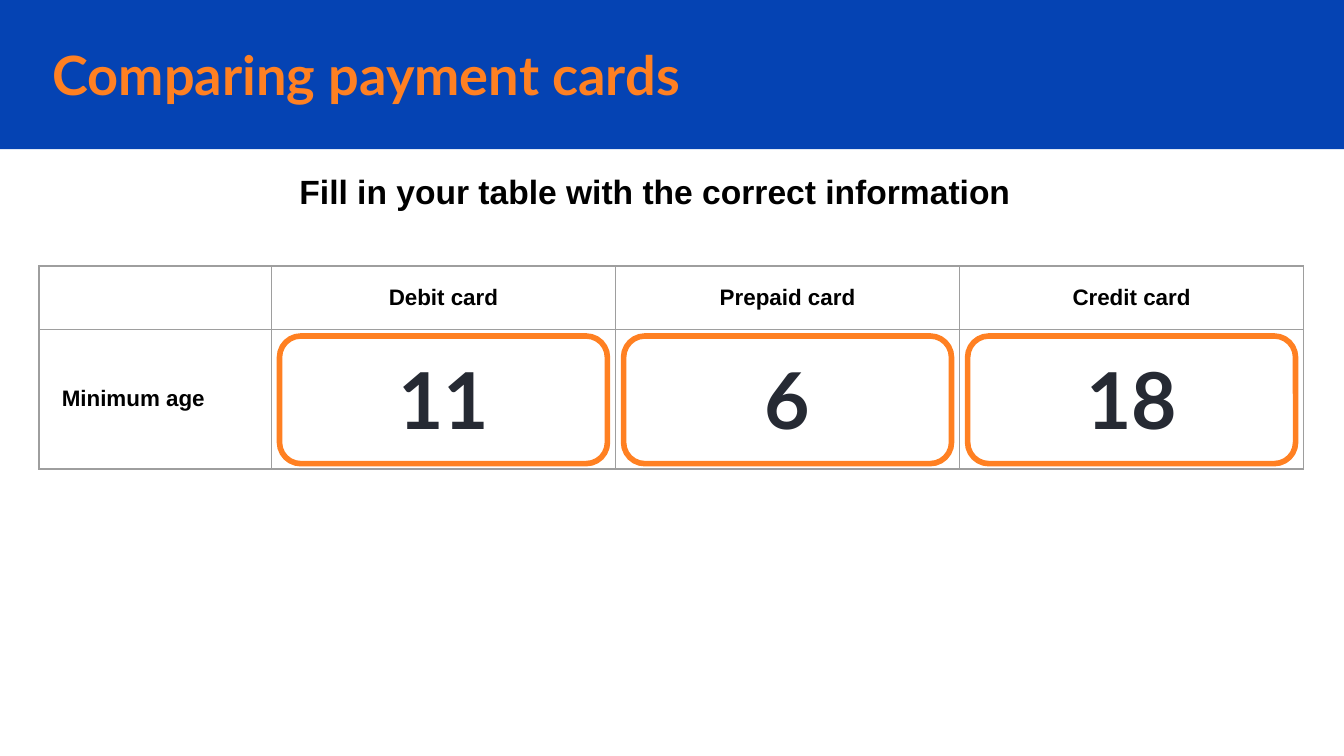
from lxml import etree
from pptx import Presentation
from pptx.dml.color import RGBColor
from pptx.enum.shapes import MSO_SHAPE
from pptx.enum.text import MSO_ANCHOR, PP_ALIGN
from pptx.oxml.ns import qn
from pptx.util import Inches, Pt

BLUE = RGBColor(0x05, 0x43, 0xB3)
ORANGE = RGBColor(0xFF, 0x80, 0x22)
INK = RGBColor(0x26, 0x2A, 0x33)
BLACK = RGBColor(0, 0, 0)
GREY = RGBColor(0x9E, 0x9E, 0x9E)

RECT, ROUND_RECT = MSO_SHAPE.RECTANGLE, MSO_SHAPE.ROUNDED_RECTANGLE
LEFT, CENTER = PP_ALIGN.LEFT, PP_ALIGN.CENTER
TOP, MIDDLE = MSO_ANCHOR.TOP, MSO_ANCHOR.MIDDLE


def write(tf, text, size=12, font="Arial", color=BLACK, align=CENTER):
    p = tf.paragraphs[0]
    p.alignment = align
    r = p.add_run()
    r.text = text
    r.font.size = Pt(size)
    r.font.name = font
    r.font.bold = True
    r.font.color.rgb = color


def set_margins(box, x, y):
    box.margin_left = box.margin_right = Inches(x)
    box.margin_top = box.margin_bottom = Inches(y)


def set_borders(cell, color, width):
    tc_pr = cell._tc.get_or_add_tcPr()
    for i, side in enumerate(("lnL", "lnR", "lnT", "lnB")):
        ln = etree.Element(qn(f"a:{side}"), w=str(Pt(width)))
        fill = etree.SubElement(ln, qn("a:solidFill"))
        etree.SubElement(fill, qn("a:srgbClr"), val=str(color))
        tc_pr.insert(i, ln)


class CardSlide:
    def __init__(self, prs):
        self.s = prs.slides.add_slide(prs.slide_layouts[5])

    def shape(self, kind, x, y, w, h, fill=None, line=None):
        sp = self.s.shapes.add_shape(kind, Inches(x), Inches(y), Inches(w), Inches(h))
        sp.shadow.inherit = False
        if fill is None:
            sp.fill.background()
        else:
            sp.fill.solid()
            sp.fill.fore_color.rgb = fill
        if line is None:
            sp.line.fill.background()
        else:
            sp.line.color.rgb = line
            sp.line.width = Pt(3)
        return sp

    def title(self, text, x, y, w, h):
        sp = self.s.shapes.title
        sp.left, sp.top, sp.width, sp.height = (Inches(v) for v in (x, y, w, h))
        tf = sp.text_frame
        tf.vertical_anchor = MIDDLE
        set_margins(tf, 0.1, 0.1)
        write(tf, text, size=29, font="Lato", color=ORANGE, align=LEFT)
        return sp

    def text(self, text, x, y, w, h, **style):
        sp = self.s.shapes.add_textbox(Inches(x), Inches(y), Inches(w), Inches(h))
        tf = sp.text_frame
        tf.word_wrap = True
        set_margins(tf, 0.1, 0.1)
        write(tf, text, **style)

    def table(self, rows, x, y, widths, heights):
        frame = self.s.shapes.add_table(len(rows), len(widths), Inches(x), Inches(y),
                                        Inches(sum(widths)), Inches(sum(heights)))
        table = frame.table
        table.first_row = table.horz_banding = False
        for column, w in zip(table.columns, widths):
            column.width = Inches(w)
        for row, h in zip(table.rows, heights):
            row.height = Inches(h)
        for i, row in enumerate(rows):
            for j, text in enumerate(row):
                cell = table.cell(i, j)
                cell.fill.background()
                set_borders(cell, GREY, 0.75)
                is_age = i > 0 and j > 0
                cell.vertical_anchor = TOP if is_age else MIDDLE
                if i == 0:
                    set_margins(cell, 0.1, 0.05)
                else:
                    set_margins(cell, 0.17, 0.17)
                if is_age:
                    write(cell.text_frame, text, size=42, font="Lato", color=INK)
                elif text:
                    write(cell.text_frame, text, align=CENTER if j else LEFT)


def main():
    # Widescreen, 16:9
    prs = Presentation()
    prs.slide_width = Inches(10)
    prs.slide_height = prs.slide_width * 9 // 16
    slide = CardSlide(prs)

    # Header: the band lies behind the title
    title = slide.title("Comparing payment cards", 0.29, 0.27, 8.46, 0.56)
    band = slide.shape(RECT, 0, 0, 10, 1.11, fill=BLUE)
    title.element.addprevious(band.element)

    # Table of minimum ages
    rows = [["", "Debit card", "Prepaid card", "Credit card"],
            ["Minimum age", "11", "6", "18"]]
    label_w, card_w = 1.73, 2.56
    slide.table(rows, 0.29, 1.98, [label_w] + [card_w] * 3, [0.47, 0.85])

    # Instruction
    slide.text("Fill in your table with the correct information",
               2.11, 1.17, 5.53, 0.5, size=18)

    # Frames around the answers
    for i in range(3):
        slide.shape(ROUND_RECT, 2.08 + i * card_w, 2.5, 2.44, 0.95, line=ORANGE)

    prs.save("out.pptx")


if __name__ == "__main__":
    main()
